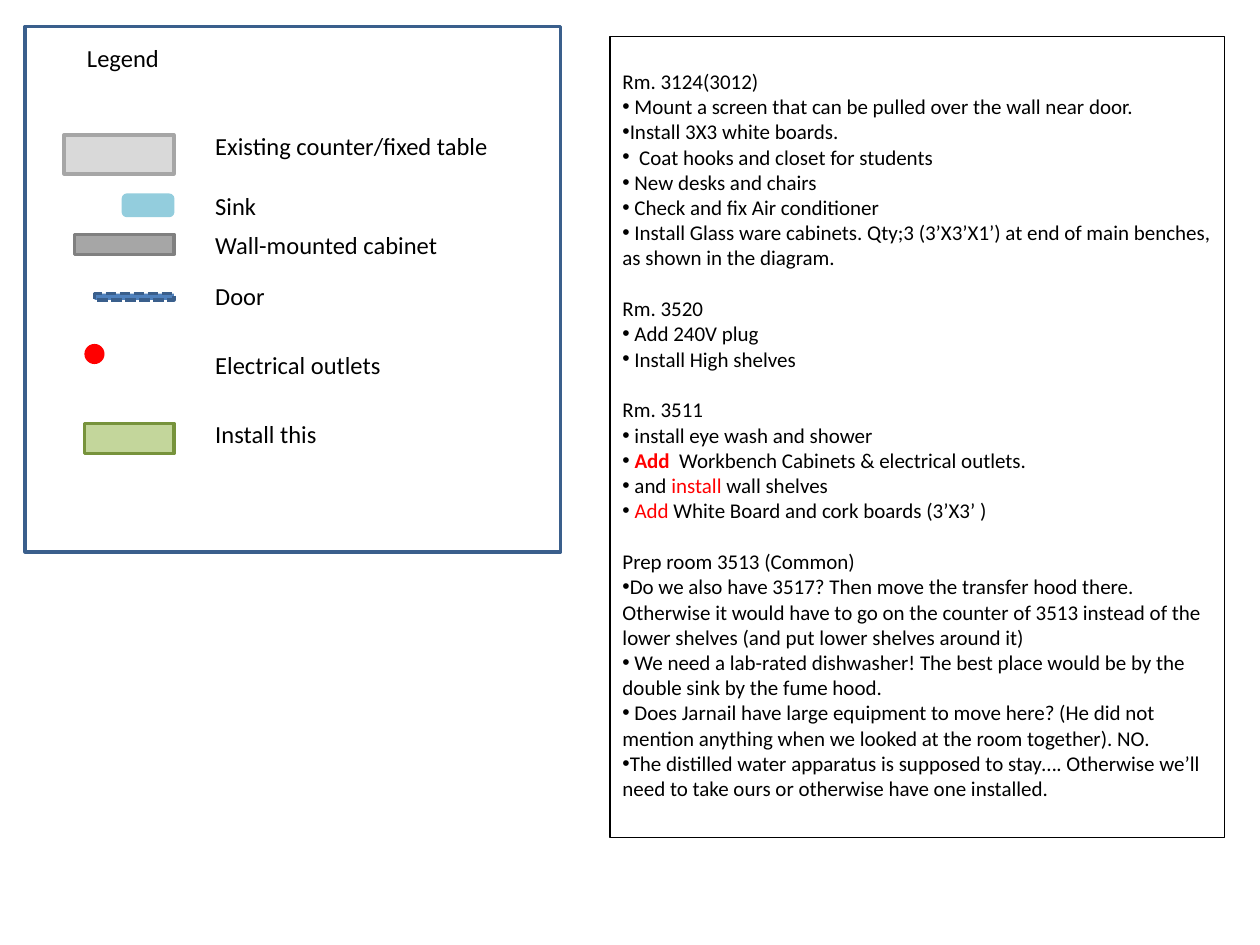
import pptx
import pptx.util
import pptx.dml.color
import pptx.enum.dml
import pptx.enum.shapes
import pptx.enum.text
import lxml.etree

INCH, PT = pptx.util.Inches, pptx.util.Pt
KIND = pptx.enum.shapes.MSO_SHAPE
FONT = "Calibri"
HUES = {
    "black": "000000", "red": "FF0000", "blue": "4F81BD", "navy": "3A5F8C",
    "pale": "D9D9D9", "grey": "A6A6A6", "dark": "808080",
    "aqua": "93CDDD", "lime": "C3D69B", "green": "77933C",
}
LABEL_X, LABEL_H = 1.61, 0.34
LINE = 14.65  # height in points of one line of notes

# Legend keys: kind, box, fill, line
KEYS = [
    (KIND.RECTANGLE, (0.51, 1.07, 0.87, 0.31), "pale", "grey"),
    (KIND.ROUNDED_RECTANGLE, (0.98, 1.55, 0.39, 0.16), "aqua", "aqua"),
    (KIND.RECTANGLE, (0.59, 1.86, 0.79, 0.16), "grey", "dark"),
    (KIND.RECTANGLE, (0.67, 3.36, 0.71, 0.24), "lime", "green"),
    (KIND.RECTANGLE, (0.2, 0.21, 4.25, 4.17), None, "navy"),
    (KIND.OVAL, (0.67, 2.73, 0.16, 0.16), "red", None),
]

# Legend labels: text, top, width
LABELS = [
    ("Existing counter/fixed table", 0.99, 2.39),
    ("Sink", 1.47, 0.53),
    ("Wall-mounted cabinet", 1.78, 1.98),
    ("Door", 2.18, 0.6),
    ("Electrical outlets", 2.73, 1.53),
    ("Install this", 3.28, 1.02),
]

# Notes by room: each bullet is a list of runs (text, colour, bold)
NOTES = {
    "Rm. 3124(3012)": [
        [(" Mount a screen that can be pulled over the wall near door.",)],
        [("Install 3X3 white boards.",)],
        [("  Coat hooks and closet for students",)],
        [(" New desks and chairs",)],
        [(" Check and fix Air conditioner",)],
        [(" Install Glass ware cabinets. Qty;3 (3’X3’X1’) at end of main "
          "benches, as shown in the diagram.",)],
    ],
    "Rm. 3520": [
        [(" Add 240V plug",)],
        [(" Install High shelves",)],
    ],
    "Rm. 3511": [
        [(" install eye wash and shower",)],
        [(" ",), ("Add", "red", True),
         ("  Workbench Cabinets & electrical outlets.",)],
        [(" and ",), ("install", "red"), (" wall shelves",)],
        [(" ",), ("Add", "red"), (" White Board and cork boards (3’X3’ )",)],
    ],
    "Prep room 3513 (Common)": [
        [("Do we also have 3517? Then move the transfer hood there. Otherwise "
          "it would have to go on the counter of 3513 instead of the lower "
          "shelves (and put lower shelves around it)",)],
        [(" We need a lab-rated dishwasher! The best place would be by the "
          "double sink by the fume hood.",)],
        [(" Does Jarnail have large equipment to move here? (He did not "
          "mention anything when we looked at the room together). NO.",)],
        [("The distilled water apparatus is supposed to stay…. Otherwise "
          "we’ll need to take ours or otherwise have one installed.",)],
    ],
}


def rgb(hue):
    return pptx.dml.color.RGBColor.from_string(HUES[hue])


def place(shape, box):
    shape.left, shape.top, shape.width, shape.height = map(INCH, box)


def setup(frame, wrap):
    """Top-anchored text of fixed size with standard insets."""
    frame.word_wrap = wrap
    frame.auto_size = pptx.enum.text.MSO_AUTO_SIZE.NONE
    frame.vertical_anchor = pptx.enum.text.MSO_ANCHOR.TOP
    frame.margin_left = frame.margin_right = INCH(0.1)
    frame.margin_top = frame.margin_bottom = INCH(0.05)


def add_run(para, text, size, hue="black", bold=False):
    run = para.add_run()
    run.text = text
    font = run.font
    font.name, font.size, font.bold = FONT, PT(size), bold
    font.color.rgb = rgb(hue)


def add_key(slide, kind, box, fill, line):
    """Legend symbol; fill or line may be None."""
    key = slide.shapes.add_shape(kind, *map(INCH, box))
    key.shadow.inherit = False
    if fill:
        key.fill.solid()
        key.fill.fore_color.rgb = rgb(fill)
    else:
        key.fill.background()
    if line:
        key.line.color.rgb = rgb(line)
        key.line.width = PT(2)
    else:
        key.line.fill.background()
    return key


def write_label(shape, text):
    setup(shape.text_frame, False)
    para = shape.text_frame.paragraphs[0]
    para.alignment = pptx.enum.text.PP_ALIGN.LEFT
    add_run(para, text, 14)


def set_bullet(para, mark):
    """Flush-left paragraph with a bullet, or without one."""
    props = para._p.get_or_add_pPr()
    props.set("marL", "0")
    props.set("indent", "0")
    space = pptx.oxml.ns.qn
    if mark:
        lxml.etree.SubElement(props, space("a:buFont")).set("typeface", "Arial")
        lxml.etree.SubElement(props, space("a:buChar")).set("char", mark)
    else:
        lxml.etree.SubElement(props, space("a:buNone"))


def write_notes(body):
    frame = body.text_frame
    setup(frame, True)
    frame.margin_top = INCH(0.05) + PT(LINE)
    para = frame.paragraphs[0]
    for room, items in NOTES.items():
        first = para is not None
        para = para or frame.add_paragraph()
        para.space_before = PT(0 if first else LINE)
        set_bullet(para, None)
        add_run(para, room, 12)
        for runs in items:
            para = frame.add_paragraph()
            para.space_before = PT(0)
            set_bullet(para, "•")
            for run in runs:
                add_run(para, run[0], 12, *run[1:])
        para = None


def main():
    deck = pptx.Presentation()
    deck.slide_width, deck.slide_height = INCH(10), INCH(7.5)
    slide = deck.slides.add_slide(deck.slide_layouts[1])

    # Legend heading
    title = slide.shapes.title
    place(title, (0.59, 0.29, 0.78, LABEL_H))
    write_label(title, "Legend")

    # Room notes
    body = slide.placeholders[1]
    place(body, (4.84, 0.29, 4.88, 6.36))
    body.line.color.rgb = rgb("black")
    body.line.width = PT(0.75)
    write_notes(body)

    # Legend symbols and frame
    for key in KEYS:
        add_key(slide, *key)
    door = add_key(slide, KIND.RECTANGLE, (1.04, 2.04, 0.05, 0.63),
                   "blue", "navy")
    door.rotation = 90
    door.line.dash_style = pptx.enum.dml.MSO_LINE.SQUARE_DOT

    # Legend labels
    for text, top, width in LABELS:
        box = map(INCH, (LABEL_X, top, width, LABEL_H))
        write_label(slide.shapes.add_textbox(*box), text)

    deck.save("out.pptx")


if __name__ == "__main__":
    main()
